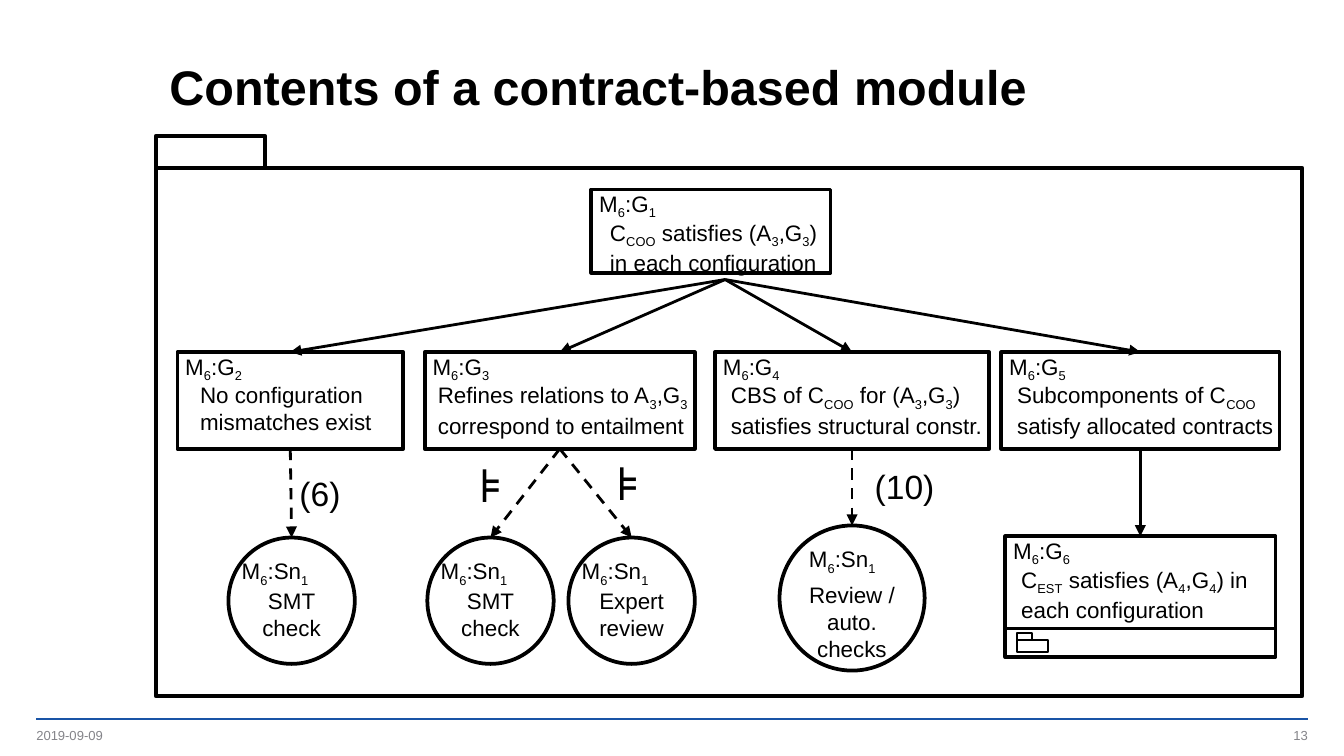
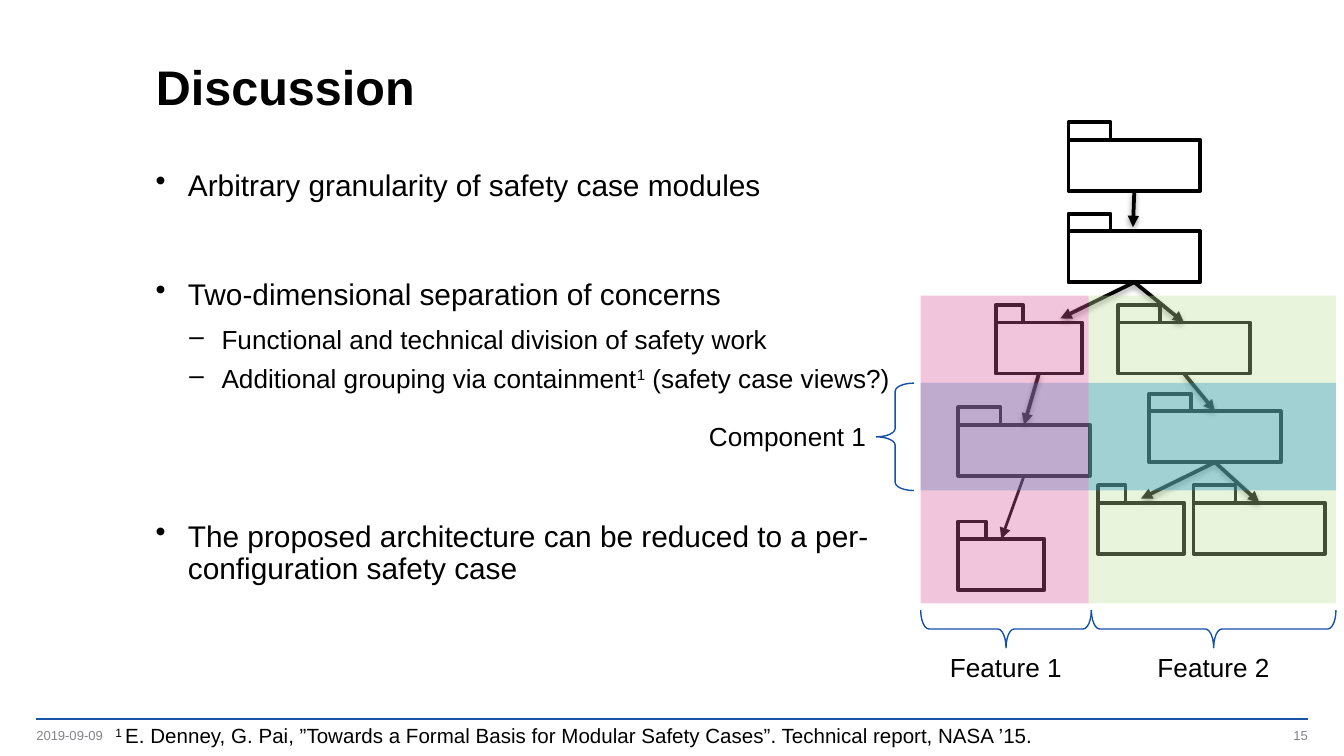
from dataclasses import dataclass
from lxml.etree import SubElement
from pptx import Presentation
from pptx.dml.color import RGBColor
from pptx.enum.dml import MSO_LINE
from pptx.enum.shapes import MSO_CONNECTOR, MSO_SHAPE
from pptx.enum.text import MSO_ANCHOR, MSO_AUTO_SIZE, PP_ALIGN
from pptx.oxml.ns import qn
from pptx.util import Inches, Pt

BLACK, WHITE, GREY = "000000", "FFFFFF", "848489"
RULE_BLUE, BRACE_BLUE = "1954A6", "1552A6"
PINK, GREEN, BLUE = "D95999", "C0E19E", "2091C3"
SUBSCRIPT, SUPERSCRIPT = -25000, 30000
SLIDE_COLS, SLIDE_ROWS = 100, 56.25


@dataclass
class Box:
    """Area measured in grid columns and rows."""
    x: float
    y: float
    w: float
    h: float

    @property
    def cx(self):
        """Column of the centre."""
        return self.x + self.w / 2

    @property
    def top(self):
        """Middle of the upper edge."""
        return self.cx, self.y

    @property
    def bottom(self):
        """Middle of the lower edge."""
        return self.cx, self.y + self.h

    def inner(self, dx, dy, w, h):
        """Area offset from this one's corner."""
        return Box(self.x + dx, self.y + dy, w, h)

    def emu(self):
        """Left, top, width and height as lengths."""
        return [grid(v) for v in (self.x, self.y, self.w, self.h)]


def grid(units):
    """Length of grid units."""
    return Inches(units / 10)


def rgb(code):
    """Colour from a hex string."""
    return RGBColor.from_string(code)


def write_runs(paragraph, text, size, color=BLACK, font="Arial", bold=False, shift=SUBSCRIPT):
    """Fill a paragraph; pieces between underscores are shifted."""
    for i, piece in enumerate(text.split("_")):
        if not piece:
            continue
        run = paragraph.add_run()
        run.text = piece
        run.font.size, run.font.name, run.font.bold = Pt(size), font, bold
        run.font.color.rgb = rgb(color)
        if i % 2:
            run._r.get_or_add_rPr().set("baseline", str(shift))


def write(slide, box, text, size=12, wrap=True, align=PP_ALIGN.LEFT, **style):
    """Add a text box with one paragraph per line."""
    frame = slide.shapes.add_textbox(*box.emu()).text_frame
    frame.word_wrap = wrap
    for i, line in enumerate(text.split("\n")):
        paragraph = frame.add_paragraph() if i else frame.paragraphs[0]
        paragraph.alignment = align
        write_runs(paragraph, line, size, **style)
    return frame


def outline(slide, preset, box, weight=2, line=BLACK, fill=WHITE):
    """Add a preset shape with an optional fill."""
    shape = slide.shapes.add_shape(preset, *box.emu())
    shape.shadow.inherit = False
    if fill:
        shape.fill.solid()
        shape.fill.fore_color.rgb = rgb(fill)
    else:
        shape.fill.background()
    shape.line.color.rgb = rgb(line)
    shape.line.width = Pt(weight)
    return shape


def stroke(slide, start, end, weight=1.5, color=BLACK, head=True, dashed=False, shadow=False):
    """Add a straight line, by default an arrow."""
    link = slide.shapes.add_connector(MSO_CONNECTOR.STRAIGHT, *[grid(v) for v in (*start, *end)])
    link.line.color.rgb = rgb(color)
    link.line.width = Pt(weight)
    if dashed:
        link.line.dash_style = MSO_LINE.DASH
    if head:
        SubElement(link.line._get_or_add_ln(), qn("a:tailEnd"), type="triangle")
    effects = SubElement(link._element.spPr, qn("a:effectLst"))
    if shadow:
        outer = SubElement(effects, qn("a:outerShdw"), blurRad="40000", dist="20000",
                           dir="5400000", rotWithShape="0")
        tint = SubElement(outer, qn("a:srgbClr"), val=BLACK)
        SubElement(tint, qn("a:alpha"), val="38000")


def folder(slide, box, tab_w, tab_h, weight=2):
    """Draw a module folder with its tab."""
    body = box.inner(0, tab_h, box.w, box.h - tab_h)
    outline(slide, MSO_SHAPE.FLOWCHART_PROCESS, body, weight)
    outline(slide, MSO_SHAPE.RECTANGLE, box.inner(0, 0, tab_w, tab_h), weight)


def titled_slide(deck, title, title_x, number):
    """Start a slide with title, rule, date and number."""
    slide = deck.slides.add_slide(deck.slide_layouts[5])
    holder = slide.shapes.title
    holder.left, holder.top, holder.width, holder.height = Box(title_x, 2.8, 82.6, 7.4).emu()
    frame = holder.text_frame
    frame.auto_size, frame.vertical_anchor = MSO_AUTO_SIZE.NONE, MSO_ANCHOR.MIDDLE
    heading = frame.paragraphs[0]
    heading.alignment, heading.line_spacing = PP_ALIGN.LEFT, Pt(30)
    write_runs(heading, title, 26, bold=True)
    stroke(slide, (2.7, 53.5), (97.3, 53.5), 1, RULE_BLUE, head=False)
    for x, text, align in ((2.7, "2019-09-09", PP_ALIGN.LEFT), (74.8, number, PP_ALIGN.RIGHT)):
        footer = write(slide, Box(x, 54.1, 22.5, 1.3), text, 7, align=align, color=GREY)
        footer.margin_left = footer.margin_right = footer.margin_top = footer.margin_bottom = 0
        footer.vertical_anchor = MSO_ANCHOR.MIDDLE
    return slide


def goal(slide, box, number, claim, indent, claim_w):
    """Draw a goal and return the area of its claim."""
    claim_box = box.inner(indent, 1.7, claim_w, 5)
    outline(slide, MSO_SHAPE.FLOWCHART_PROCESS, box)
    write(slide, claim_box, claim)
    write(slide, box.inner(-0.4, -0.45, 6.5, 3), f"M_6_:G_{number}_", wrap=False)
    return claim_box


def evidence(slide, box, text, label_dx=0):
    """Draw a solution circle with label and centred text."""
    outline(slide, MSO_SHAPE.OVAL, box)
    write(slide, box.inner(label_dx, 1, 7.2, 3), "M_6_:Sn_1_", wrap=False)
    area = box.inner(box.w * 0.08, box.h * 0.34, box.w * 0.84, 5)
    write(slide, area, text, wrap="\n" not in text, align=PP_ALIGN.CENTER)


def module_goal(slide, box):
    """Draw the goal that is developed in another module."""
    goal(slide, box, 6, "C_EST_ satisfies (A_4_,G_4_) in each configuration", 0.2, 20.7)
    divider = box.y + box.h * 0.76
    stroke(slide, (box.x, divider), (box.x + box.w, divider), head=False)
    folder(slide, box.inner(0.9, 7.2, 2.3, 1.4), 1.1, 0.5, 1)


def contract_module(slide, box):
    """Draw the goal structure inside its module folder."""
    folder(slide, box, 8.1, 2.4)
    root = goal(slide, box.inner(32.4, 4, 17.8, 6.2), 1,
                "C_COO_ satisfies (A_3_,G_3_) in each configuration", 0.4, 19.1)
    subgoals = (
        (1.6, 16.8, "No configuration mismatches exist", 0.7, 14.9),
        (20, 20.1, "Refines relations to A_3_,G_3_ correspond to entailment", 0, 21.6),
        (41.6, 20.4, "CBS of C_COO_ for (A_3_,G_3_) satisfies structural constr.", 0.2, 21),
        (62.9, 20.7, "Subcomponents of C_COO_ satisfy allocated contracts", 0.2, 21.4),
    )
    areas = []
    for number, (x, w, claim, indent, claim_w) in enumerate(subgoals, 2):
        area = box.inner(x, 16.1, w, 7.2)
        goal(slide, area, number, claim, indent, claim_w)
        stroke(slide, root.bottom, area.top)
        areas.append(area)
    mismatch, refines, structure, allocated = areas
    solutions = (
        (mismatch, 5.4, 29.9, 9.4, "SMT\ncheck", 0),
        (refines, 20.2, 29.9, 9.4, "SMT\ncheck", 0),
        (refines, 30.7, 29.9, 9.4, "Expert review", 0),
        (structure, 46.4, 29, 10.8, "Review /\nauto. checks", 1.2),
    )
    for parent, x, y, size, text, label_dx in solutions:
        circle = box.inner(x, y, size, size)
        evidence(slide, circle, text, label_dx)
        stroke(slide, parent.bottom, circle.top, dashed=True)
    away = box.inner(63.2, 29.8, 20.1, 9)
    module_goal(slide, away)
    stroke(slide, allocated.bottom, away.top)
    for x, y, w, mark in ((9.7, 24.6, 5.1, "(6)"), (52.5, 24.1, 6.5, "(10)")):
        write(slide, box.inner(x, y, w, 4), mark, 18, wrap=False)
    for x, y in ((23, 23.5), (33.2, 23.3)):
        write(slide, box.inner(x, y, 3.8, 5), "⊧", 24, wrap=False, font="Cambria")


def discussion_points(slide, box):
    """Write the two-level bullet list."""
    points = (
        (0, 0, "Arbitrary granularity of safety case modules"),
        (0, 39, "Two-dimensional separation of concerns"),
        (1, 6, "Functional and technical division of safety work"),
        (1, 6, "Additional grouping via containment_1_ (safety case views?)"),
        (0, 68, "The proposed architecture can be reduced to a per-configuration safety case"),
    )
    frame = slide.shapes.add_textbox(*box.emu()).text_frame
    frame.word_wrap = True
    for i, (level, before, text) in enumerate(points):
        paragraph = frame.add_paragraph() if i else frame.paragraphs[0]
        paragraph.level, paragraph.line_spacing = level, 0.9
        paragraph.space_before, paragraph.space_after = Pt(before), Pt(0 if level else 2)
        props = paragraph._p.get_or_add_pPr()
        props.set("marL", str(Inches(0.49 if level else 0.24)))
        props.set("indent", str(Inches(-0.24)))
        SubElement(SubElement(props, qn("a:buClr")), qn("a:srgbClr"), val=BLACK)
        SubElement(props, qn("a:buChar"), char="–" if level else "•")
        write_runs(paragraph, text, 14 if level else 16, shift=SUPERSCRIPT)


def module_tree(slide, box):
    """Draw the folders and the arrows between them."""
    wide, narrow, height, tab_h = 9.8, 6.4, 5.1, 1.3
    places = {
        "system": (8.2, 0, wide), "platform": (8.2, 6.8, wide),
        "feature 1": (2.8, 13.6, narrow), "feature 2": (11.9, 13.6, wide),
        "component 1": (0, 21.2, wide), "leaf 1": (0, 29.7, narrow),
        "component 2": (14.2, 20.2, wide), "leaf 2": (10.4, 27, narrow), "leaf 3": (17.5, 27, wide),
    }
    modules = {name: box.inner(x, y, w, height) for name, (x, y, w) in places.items()}
    for module in modules.values():
        folder(slide, module, module.w * 0.32, tab_h)
    links = (
        ("system", "platform", -0.1, 1), ("platform", "feature 1", 1.6, 1),
        ("platform", "feature 2", 0, tab_h), ("feature 1", "component 1", 0, tab_h),
        ("feature 2", "component 2", 0, tab_h), ("component 2", "leaf 2", 0, 1),
        ("component 2", "leaf 3", 0, tab_h), ("component 1", "leaf 1", 0, tab_h),
    )
    for parent, child, dx, dy in links:
        target = modules[child]
        strong = child != "leaf 1"
        stroke(slide, modules[parent].bottom, (target.cx + dx, target.y + dy),
               2 if strong else 1.5, shadow=strong)


def brace(slide, box, rotation, label, label_box):
    """Draw a rotated brace filling the box, with its label."""
    frame = box
    if rotation == 90:
        frame = Box(box.cx - box.h / 2, box.y + box.h / 2 - box.w / 2, box.h, box.w)
    shape = outline(slide, MSO_SHAPE.RIGHT_BRACE, frame, 0.75, BRACE_BLUE, fill=None)
    shape.adjustments[0], shape.adjustments[1] = 0.22, 0.5
    shape.rotation = rotation
    write(slide, label_box, label, 14, align=PP_ALIGN.CENTER)


def concern_zones(slide, box):
    """Tint the feature columns and component row and name them."""
    split, row_y, row_h, depth = 12.5, 6.5, 8, 2.8
    zones = (
        (box.inner(split, 0, box.w - split, box.h), GREEN),
        (box.inner(0, row_y, box.w, row_h), BLUE),
        (box.inner(0, 0, split, box.h), PINK),
    )
    for area, tint in zones:
        zone = outline(slide, MSO_SHAPE.RECTANGLE, area, fill=tint)
        zone.line.fill.background()
        color = zone._element.spPr.find(qn("a:solidFill"))[0]
        SubElement(color, qn("a:alpha"), val="35000")
    columns = ((0, 12.7, "Feature 1"), (12.7, box.w - 12.7, "Feature 2"))
    for x, w, label in columns:
        span = box.inner(x, box.h + 0.5, w, depth)
        brace(slide, span, 90, label, Box(span.cx - 7.2, span.y + 2.6, 14.4, 3.4))
    side = box.inner(-3.3, row_y, depth, row_h)
    brace(slide, side, 180, "Component 1", side.inner(-13.8, 2.3, 14.4, 3.4))


def main():
    """Build both slides."""
    deck = Presentation()
    deck.slide_width, deck.slide_height = grid(SLIDE_COLS), grid(SLIDE_ROWS)
    contents = titled_slide(deck, "Contents of a contract-based module", 11.6, "13")
    contract_module(contents, Box(11.6, 10.1, 85.3, 41.7))
    discussion = titled_slide(deck, "Discussion", 10.6, "15")
    discussion_points(discussion, Box(10.6, 12.2, 56.8, 39.5))
    module_tree(discussion, Box(71.3, 9.1, 27.3, 34.8))
    concern_zones(discussion, Box(68.5, 22, 30.9, 22.9))
    citation = ("_1 _E. Denney, G. Pai, ”Towards a Formal Basis for Modular Safety Cases”. "
                "Technical report, NASA ’15.")
    write(discussion, Box(7.6, 53.3, 75.1, 2.9), citation, 11, shift=SUPERSCRIPT)
    deck.save("out.pptx")


if __name__ == "__main__":
    main()
